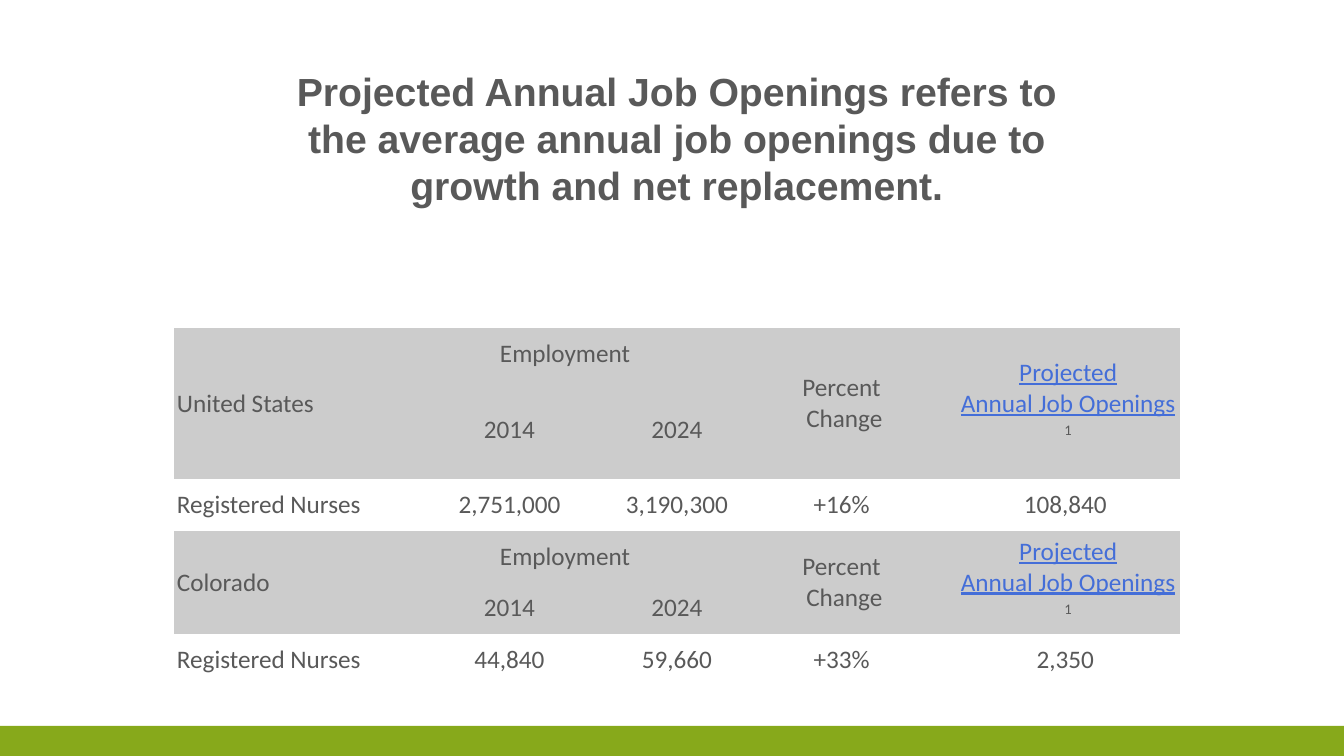
from pptx import Presentation
from pptx.dml.color import RGBColor
from pptx.enum.shapes import MSO_SHAPE
from pptx.enum.text import MSO_ANCHOR, PP_ALIGN
from pptx.oxml.ns import qn
from pptx.util import Cm, Pt

TITLE = ("Projected Annual Job Openings refers to the average annual "
         "job openings due to growth and net replacement.")
REGIONS = [
    ("United States", ["Registered Nurses", "2,751,000", "3,190,300", "+16% ", "108,840 "]),
    ("Colorado", ["Registered Nurses", "44,840", "59,660", "+33% ", "2,350 "]),
]
YEARS = ["2014", "2024"]
EMPLOYMENT = "Employment"
CHANGE = "Percent \nChange"
OPENINGS = "Projected\nAnnual Job Openings"
FOOTNOTE = "1"

COLORS = {"text": "595959", "link": "446ED8", "header": "CCCCCC", "band": "87A91B"}
NO_STYLE = "{2D5ABB26-0587-4C30-8999-92F81FD0307C}"
COLUMN_WIDTHS = [5.64, 5.64, 2.8, 5.64, 5.64]
ROW_HEIGHTS = [1.31, 2.48, 1.31, 1.3, 1.3, 1.31]
ROWS_PER_REGION = 3
CELL_MARGIN = Cm(0.08)


def write(paragraph, text, size=18, font="Calibri", color="text", bold=False,
          underline=False, superscript=False, align=PP_ALIGN.CENTER):
    """Append text to the paragraph, turning each newline into a line break."""
    paragraph.alignment = align
    for number, line in enumerate(text.split("\n")):
        if number:
            paragraph.add_line_break()
        run = paragraph.add_run()
        run.text = line
        run.font.size = Pt(size)
        run.font.name = font
        run.font.bold = bold
        run.font.underline = underline
        run.font.color.rgb = RGBColor.from_string(COLORS[color])
        if superscript:
            run.font._element.set("baseline", "30000")


def add_band(slide):
    band = slide.shapes.add_shape(MSO_SHAPE.RECTANGLE, 0, Cm(18.29), Cm(33.87), Cm(0.76))
    band.shadow.inherit = False
    band.fill.solid()
    band.fill.fore_color.rgb = RGBColor.from_string(COLORS["band"])
    band.line.fill.background()


def add_title(slide):
    title = slide.shapes.add_textbox(Cm(6.83), Cm(1.55), Cm(20.45), Cm(3.84)).text_frame
    title.word_wrap = True
    title.vertical_anchor = MSO_ANCHOR.MIDDLE
    write(title.paragraphs[0], TITLE, size=28, font="Arial", bold=True)


def add_empty_table(slide):
    frame = slide.shapes.add_table(
        len(ROW_HEIGHTS), len(COLUMN_WIDTHS), Cm(4.38), Cm(8.27),
        Cm(sum(COLUMN_WIDTHS)), Cm(sum(ROW_HEIGHTS)))
    next(frame._element.iter(qn("a:tableStyleId"))).text = NO_STYLE
    table = frame.table
    table.first_row = table.horz_banding = False
    for column, width in zip(table.columns, COLUMN_WIDTHS):
        column.width = Cm(width)
    for index, (row, height) in enumerate(zip(table.rows, ROW_HEIGHTS)):
        row.height = Cm(height)
        for cell in row.cells:
            cell.vertical_anchor = MSO_ANCHOR.MIDDLE
            cell.margin_left = cell.margin_right = CELL_MARGIN
            cell.margin_top = cell.margin_bottom = CELL_MARGIN
            if index % ROWS_PER_REGION == ROWS_PER_REGION - 1:
                cell.fill.background()
            else:
                cell.fill.solid()
                cell.fill.fore_color.rgb = RGBColor.from_string(COLORS["header"])
    return table


def fill_region(table, top, region, figures):
    """Write the two header rows and the figures row that start at row top."""
    def paragraph(row, column):
        return table.cell(top + row, column).text_frame.paragraphs[0]

    for column in (0, 3, 4):
        table.cell(top, column).merge(table.cell(top + 1, column))
    table.cell(top, 1).merge(table.cell(top, 2))

    write(paragraph(0, 0), region, align=PP_ALIGN.LEFT)
    write(paragraph(0, 1), EMPLOYMENT)
    write(paragraph(0, 3), CHANGE)
    openings = paragraph(0, 4)
    write(openings, OPENINGS, color="link", underline=True)
    write(openings, " ")
    write(openings, FOOTNOTE, superscript=True)
    for column, year in enumerate(YEARS, start=1):
        write(paragraph(1, column), year)
    for column, figure in enumerate(figures):
        write(paragraph(2, column), figure,
              align=PP_ALIGN.CENTER if column else PP_ALIGN.LEFT)


def main():
    deck = Presentation()
    deck.slide_width, deck.slide_height = Cm(33.87), Cm(19.05)
    slide = deck.slides.add_slide(deck.slide_layouts[6])
    add_band(slide)
    table = add_empty_table(slide)
    for number, (region, figures) in enumerate(REGIONS):
        fill_region(table, number * ROWS_PER_REGION, region, figures)
    add_title(slide)
    deck.save("out.pptx")


if __name__ == "__main__":
    main()
